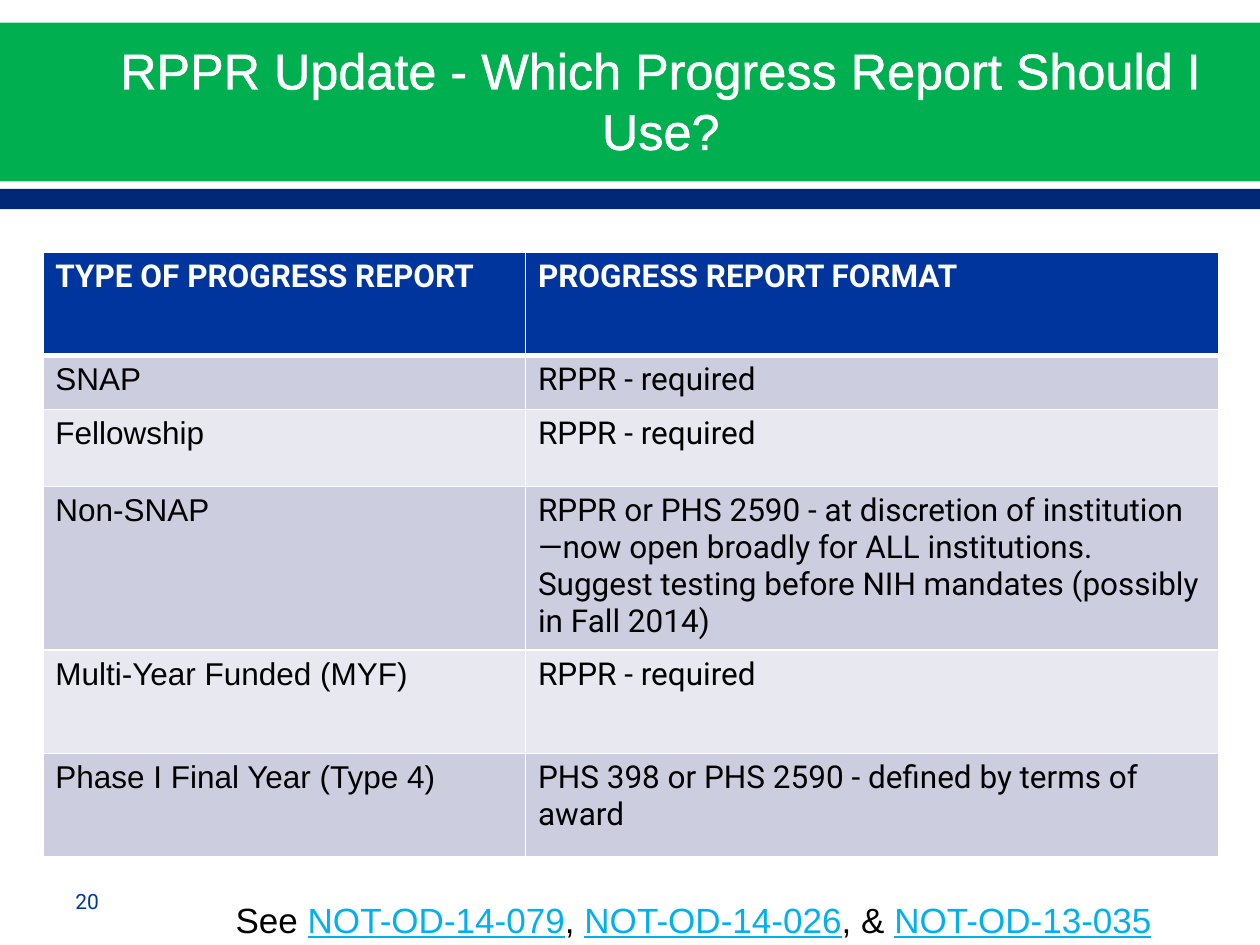
"""Build the slide that matches progress report types to their formats."""
from pptx import Presentation
from pptx.dml.color import RGBColor
from pptx.enum.shapes import MSO_SHAPE as Shape
from pptx.enum.text import MSO_ANCHOR as Anchor, PP_ALIGN as Align
from pptx.oxml import parse_xml
from pptx.oxml.ns import nsdecls
from pptx.util import Inches, Pt

WHITE = RGBColor(0xFF, 0xFF, 0xFF)
BLACK = RGBColor(0x00, 0x00, 0x00)
GREEN = RGBColor(0x00, 0xB0, 0x50)
NAVY = RGBColor(0x00, 0x28, 0x76)
BLUE = RGBColor(0x00, 0x35, 0x9E)
SKY = RGBColor(0x00, 0xB0, 0xF0)
BAND_DARK = RGBColor(0xCC, 0xCE, 0xDF)
BAND_LIGHT = RGBColor(0xE7, 0xE8, 0xF0)


def add_span(para, text, size=18, font="Arial", color=BLACK, bold=False, underline=False):
    span = para.add_run()
    span.text = text
    span.font.size = Pt(size)
    span.font.name = font
    span.font.color.rgb = color
    span.font.bold = bold
    span.font.underline = underline
    return span


def add_box(left, top, width, height, anchor=Anchor.TOP, align=Align.LEFT):
    box = page.shapes.add_textbox(Inches(left), Inches(top), Inches(width), Inches(height))
    box.text_frame.word_wrap = True
    box.text_frame.vertical_anchor = anchor
    para = box.text_frame.paragraphs[0]
    para.alignment = align
    return para


deck = Presentation()
deck.slide_width = Inches(10)
deck.slide_height = Inches(7.5)
page = deck.slides.add_slide(deck.slide_layouts[6])

for top, height, color in [(0.18, 1.26, GREEN), (1.5, 0.16, NAVY)]:
    band = page.shapes.add_shape(Shape.RECTANGLE, 0, Inches(top), deck.slide_width, Inches(height))
    band.shadow.inherit = False
    band.fill.solid()
    band.fill.fore_color.rgb = color
    band.line.fill.background()

title = add_box(0.83, 0.25, 8.83, 1.08, Anchor.MIDDLE, Align.CENTER)
title_span = add_span(title, "RPPR Update - Which Progress Report Should I Use?", size=28.8, color=WHITE)
title_span.font._element.insert(0, parse_xml(
    f'<a:ln {nsdecls("a")} w="{Pt(1.1)}"><a:solidFill><a:srgbClr val="{WHITE}"/></a:solidFill></a:ln>'))

number = add_box(0.5, 6.95, 2.33, 0.4, Anchor.MIDDLE)
add_span(number, "20", size=12, font="Roboto", color=BLUE)

rows = [
    (0.82, "TYPE OF PROGRESS REPORT", "PROGRESS REPORT FORMAT"),
    (0.43, "SNAP", "RPPR - required"),
    (0.61, "Fellowship", "RPPR - required"),
    (1.27, "Non-SNAP", "RPPR or PHS 2590 - at discretion of institution—now open broadly for ALL "
     "institutions. Suggest testing before NIH mandates (possibly in Fall 2014)"),
    (0.82, "Multi-Year Funded (MYF)", "RPPR - required"),
    (0.82, "Phase I Final Year (Type 4)", "PHS 398 or PHS 2590 - defined by terms of award"),
]
table = page.shapes.add_table(len(rows), 2, Inches(0.34), Inches(2), Inches(9.33), Inches(4.77)).table
table.columns[0].width = Inches(3.83)
table.columns[1].width = Inches(5.5)

for row_index, (height, *texts) in enumerate(rows):
    table.rows[row_index].height = Inches(height)
    header = row_index == 0
    fill = BLUE if header else BAND_DARK if row_index % 2 else BAND_LIGHT
    for column_index, text in enumerate(texts):
        cell = table.cell(row_index, column_index)
        add_span(cell.text_frame.paragraphs[0], text, bold=header,
                 font="Roboto" if header or column_index else "Arial",
                 color=WHITE if header else BLACK)
        cell_format = cell._tc.get_or_add_tcPr()
        for side in ("L", "R", "T", "B"):
            thick = (header and side == "B") or (row_index == 1 and side == "T")
            cell_format.append(parse_xml(
                f'<a:ln{side} {nsdecls("a")} w="{Pt(3 if thick else 1)}"><a:solidFill>'
                f'<a:srgbClr val="{WHITE}"/></a:solidFill></a:ln{side}>'))
        cell.fill.solid()
        cell.fill.fore_color.rgb = fill

notices = add_box(1.42, 7.08, 8.17, 0.44, align=Align.CENTER)
for lead, notice in [("See ", "NOT-OD-14-079"), (", ", "NOT-OD-14-026"), (", & ", "NOT-OD-13-035")]:
    add_span(notices, lead, size=20)
    add_span(notices, notice, size=20, color=SKY, underline=True)

deck.save("out.pptx")
